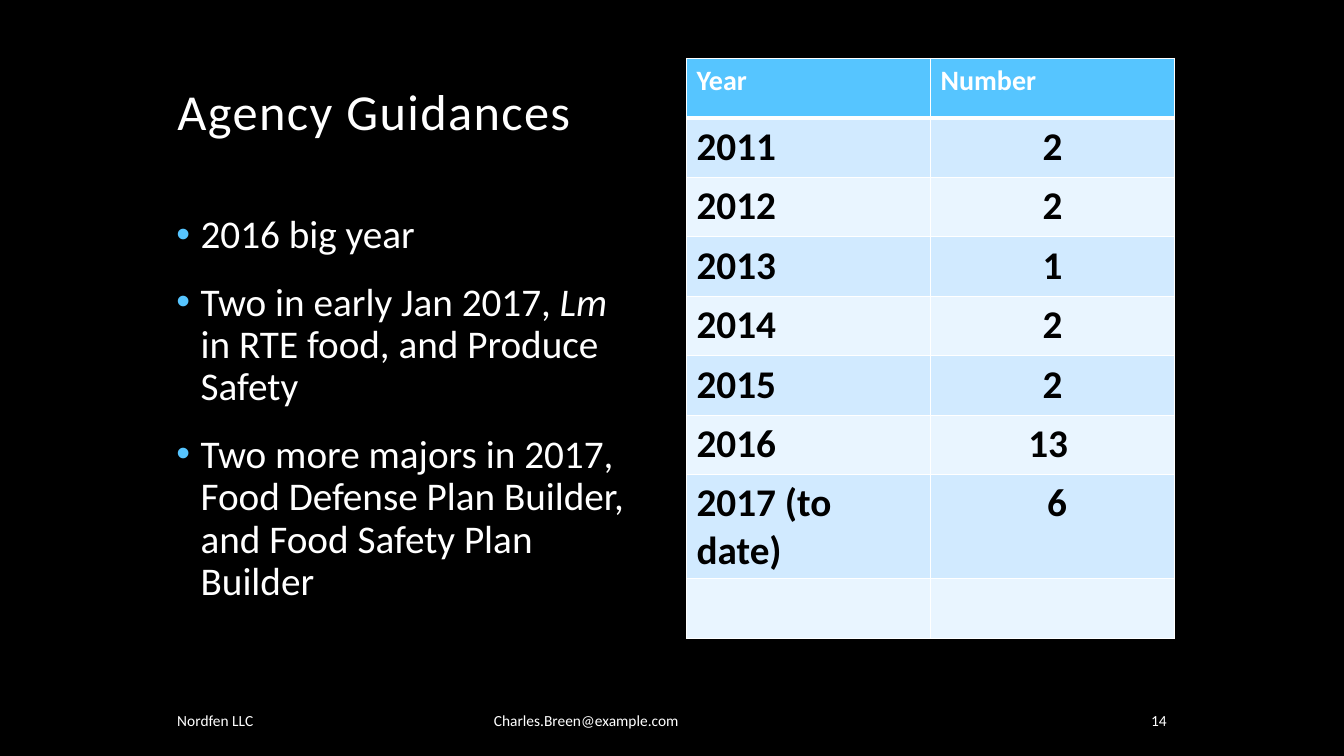
from lxml.etree import SubElement
from pptx import Presentation
from pptx.dml.color import RGBColor
from pptx.enum.text import MSO_ANCHOR as Anchor, MSO_AUTO_SIZE as AutoSize, PP_ALIGN as Align
from pptx.oxml.ns import qn
from pptx.util import Inches, Pt

FONT = "Calibri"
BLACK, WHITE, SKY = "000000", "FFFFFF", "56C5FF"
BANDS = ("D1EAFF", "E9F5FF")
TITLE = "Agency Guidances"
BULLETS = [
    [("2016 big year", False)],
    [("Two in early Jan 2017, ", False), ("Lm", True), (" in RTE food, and Produce Safety", False)],
    [("Two more majors in 2017, Food Defense Plan Builder, and Food Safety Plan Builder", False)],
]
GUIDANCES = [
    ("Year", "Number"),
    ("2011", "2"),
    ("2012", "2"),
    ("2013", "1"),
    ("2014", "2"),
    ("2015", "2"),
    ("2016", "13 "),
    ("2017 (to date)", " 6"),
    ("", ""),
]
FOOTERS = [
    ("Nordfen LLC\tCharles.Breen@example.com", 1.66, 7.17, Align.LEFT),
    ("14", 10.75, 0.92, Align.RIGHT),
]
EMAIL_TAB = 3.14
ROW_HEIGHT, COLUMN_WIDTH = 0.59, 2.42


def color(value):
    return RGBColor.from_string(value)


def style(font, size, value=WHITE, bold=False):
    font.name = FONT
    font.size = Pt(size)
    font.bold = bold
    font.color.rgb = color(value)


def place(shape, left, top, width, height):
    shape.left, shape.top = Inches(left), Inches(top)
    shape.width, shape.height = Inches(width), Inches(height)


def add_bullet(para):
    props = para._p.get_or_add_pPr()
    props.set("marL", str(Inches(0.24)))
    props.set("indent", str(-Inches(0.24)))
    tint = SubElement(props, qn("a:buClr"))
    SubElement(tint, qn("a:srgbClr"), val=SKY)
    SubElement(props, qn("a:buFont"), typeface="Arial")
    SubElement(props, qn("a:buChar"), char="•")


def add_borders(cell, bottom):
    props = cell._tc.get_or_add_tcPr()
    for side, width in (("lnL", 1), ("lnR", 1), ("lnT", 1), ("lnB", bottom)):
        line = SubElement(props, qn("a:" + side), w=str(Pt(width)))
        fill = SubElement(line, qn("a:solidFill"))
        SubElement(fill, qn("a:srgbClr"), val=WHITE)


def add_title(page):
    title = page.shapes.title
    place(title, 1.66, 0.5, 10, 1.5)
    frame = title.text_frame
    frame.text = TITLE
    frame.auto_size = AutoSize.NONE
    frame.vertical_anchor = Anchor.BOTTOM
    frame.margin_bottom = Inches(0.6)
    para = frame.paragraphs[0]
    para.alignment = Align.LEFT
    para.line_spacing = 0.9
    span = para.runs[0]
    style(span.font, 36)
    span._r.get_or_add_rPr().set("spc", "100")


def add_body(page):
    body = page.placeholders[1]
    place(body, 1.65, 2.08, 4.83, 4.5)
    frame = body.text_frame
    frame.auto_size = AutoSize.NONE
    for index, parts in enumerate(BULLETS):
        para = frame.add_paragraph() if index else frame.paragraphs[0]
        add_bullet(para)
        para.line_spacing = 0.9
        para.space_before = Pt(18 if index else 0)
        for text, italic in parts:
            span = para.add_run()
            span.text = text
            style(span.font, 28)
            span.font.italic = italic


def add_guidances(page):
    count = len(GUIDANCES)
    table = page.shapes.add_table(
        count, 2, Inches(6.81), Inches(0.58), Inches(2 * COLUMN_WIDTH), Inches(count * ROW_HEIGHT)
    ).table
    for column in table.columns:
        column.width = Inches(COLUMN_WIDTH)
    for r, entries in enumerate(GUIDANCES):
        header = r == 0
        for c, text in enumerate(entries):
            cell = table.cell(r, c)
            add_borders(cell, 3 if header else 1)
            cell.fill.solid()
            cell.fill.fore_color.rgb = color(SKY if header else BANDS[(r - 1) % 2])
            cell.text = text
            para = cell.text_frame.paragraphs[0]
            para.alignment = Align.CENTER if c and not header else Align.LEFT
            for span in para.runs:
                style(span.font, 20 if header else 28, WHITE if header else BLACK, True)


def add_footers(page):
    for text, left, width, alignment in FOOTERS:
        box = page.shapes.add_textbox(Inches(left), Inches(7), Inches(width), Inches(0.3))
        frame = box.text_frame
        frame.word_wrap = True
        frame.vertical_anchor = Anchor.MIDDLE
        frame.text = text
        para = frame.paragraphs[0]
        para.alignment = alignment
        if "\t" in text:
            tabs = SubElement(para._p.get_or_add_pPr(), qn("a:tabLst"))
            SubElement(tabs, qn("a:tab"), pos=str(Inches(EMAIL_TAB)), algn="l")
        for span in para.runs:
            style(span.font, 11)


def main():
    deck = Presentation()
    deck.slide_width, deck.slide_height = Inches(13.33), Inches(7.5)
    page = deck.slides.add_slide(deck.slide_layouts[1])
    page.background.fill.solid()
    page.background.fill.fore_color.rgb = color(BLACK)
    add_title(page)
    add_body(page)
    add_footers(page)
    add_guidances(page)
    deck.save("out.pptx")


if __name__ == "__main__":
    main()
